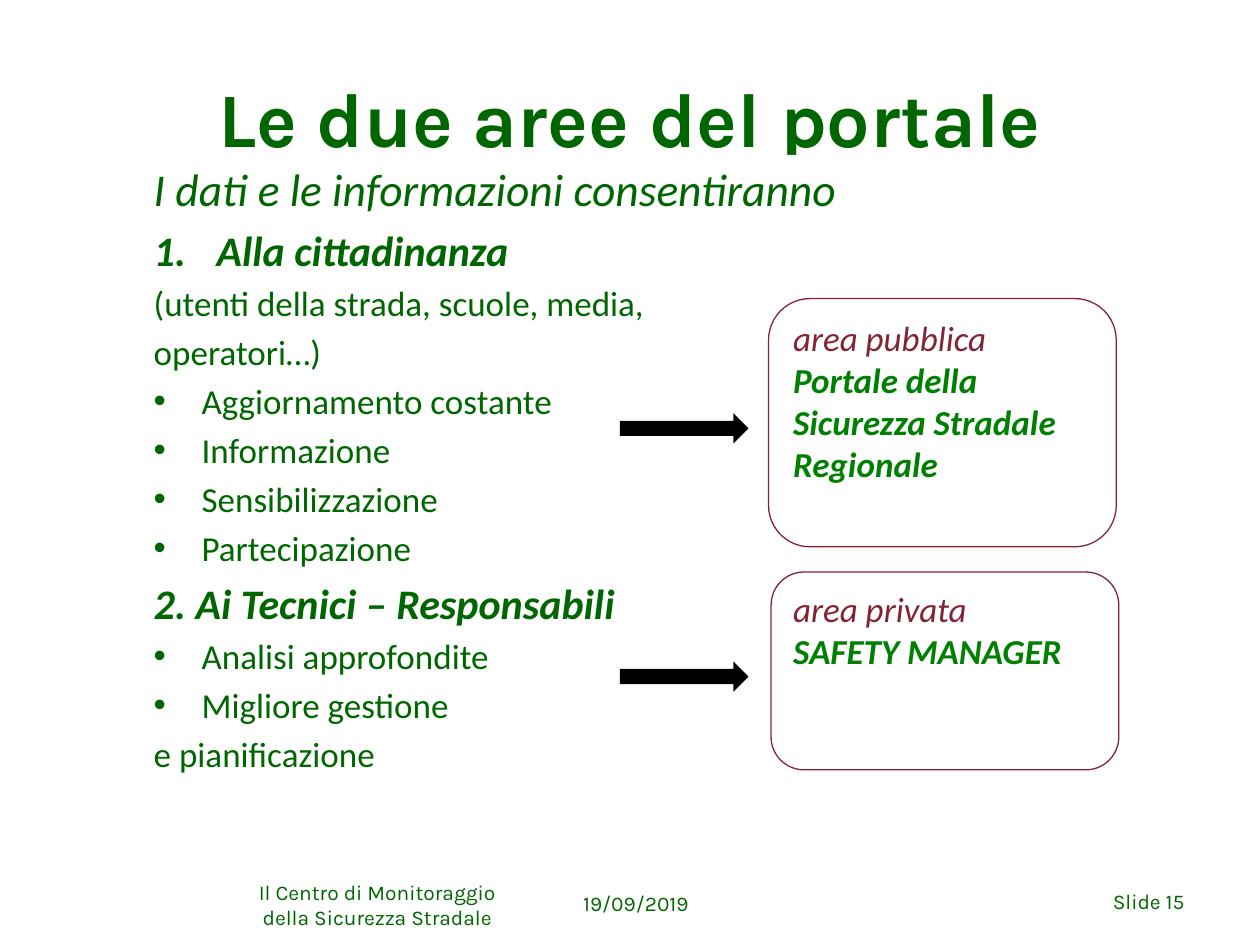
from lxml import etree
from pptx import Presentation
from pptx.dml.color import RGBColor
from pptx.enum.shapes import MSO_SHAPE
from pptx.enum.text import MSO_ANCHOR, MSO_AUTO_SIZE, PP_ALIGN
from pptx.oxml.ns import qn
from pptx.util import Inches, Pt

LEFT, CENTER, RIGHT, JUSTIFY = PP_ALIGN.LEFT, PP_ALIGN.CENTER, PP_ALIGN.RIGHT, PP_ALIGN.JUSTIFY
TOP, MIDDLE = MSO_ANCHOR.TOP, MSO_ANCHOR.MIDDLE
NO_AUTOFIT = MSO_AUTO_SIZE.NONE
ROUNDED, ARROW = MSO_SHAPE.ROUNDED_RECTANGLE, MSO_SHAPE.RIGHT_ARROW

DARK_GREEN, GREEN, MAROON = "006600", "008000", "822434"
WHITE, BLACK = "FFFFFF", "000000"
HEADING = {"size": 24, "bold": True, "italic": True}
NUMBERED = {**HEADING, "marker": ("a:buAutoNum", {"type": "arabicPeriod"}), "indent": 0.5}
BULLET = {"marker": ("a:buChar", {"char": "•"}), "indent": 0.38}
BODY_LINES = [
    ("I dati e le informazioni consentiranno", {"size": 26, "italic": True}),
    ("Alla cittadinanza", NUMBERED),
    ("(utenti della strada, scuole, media,", {}),
    ("operatori…)", {}),
    ("Aggiornamento costante", BULLET),
    ("Informazione", BULLET),
    ("Sensibilizzazione", BULLET),
    ("Partecipazione", BULLET),
    ("2. Ai Tecnici – Responsabili", HEADING),
    ("Analisi approfondite", BULLET),
    ("Migliore gestione", BULLET),
    ("e pianificazione", {}),
]


def color(value):
    """Turn a hex string into a colour."""
    return RGBColor.from_string(value)


def place(shape, box):
    """Move a shape to a box of left, top, width and height in inches."""
    shape.left, shape.top, shape.width, shape.height = map(Inches, box)


def prepare_frame(shape, anchor):
    """Give a shape an empty wrapping text frame with an anchor."""
    frame = shape.text_frame
    frame.word_wrap = True
    frame.auto_size = NO_AUTOFIT
    frame.vertical_anchor = anchor
    return frame


def write(frame, text, size=20, font="Calibri", fill=DARK_GREEN, bold=False, italic=False,
          align=LEFT, before=0, marker=("a:buNone", {}), indent=0):
    """Add one formatted paragraph, filling the empty first one if there is one."""
    first = frame.paragraphs[0]
    is_first = not first.runs
    paragraph = first if is_first else frame.add_paragraph()
    properties = paragraph._p.get_or_add_pPr()
    properties.set("marL", str(Inches(indent)))
    properties.set("indent", str(-Inches(indent)))
    tag, attributes = marker
    etree.SubElement(properties, qn(tag), attributes)
    paragraph.alignment = align
    paragraph.space_before = Pt(0 if is_first else before)
    run = paragraph.add_run()
    run.text = text
    run.font.name, run.font.size = font, Pt(size)
    run.font.bold, run.font.italic = bold, italic
    run.font.color.rgb = color(fill)


def add_title(slide, box, text):
    """Fill the title placeholder."""
    place(slide.shapes.title, box)
    frame = prepare_frame(slide.shapes.title, MIDDLE)
    write(frame, text, size=44, font="Karla", bold=True, align=CENTER)


def add_body(slide, box, lines):
    """Fill the body placeholder with the list of audiences."""
    body = slide.placeholders[1]
    place(body, box)
    body.fill.solid()
    body.fill.fore_color.rgb = color(WHITE)
    frame = prepare_frame(body, TOP)
    for text, style in lines:
        write(frame, text, align=JUSTIFY, before=style.get("size", 20) * 0.2, **style)


def add_footer(slide, box, text, align):
    """Add one footer text."""
    frame = prepare_frame(slide.shapes.add_textbox(*map(Inches, box)), MIDDLE)
    write(frame, text, size=12, font="Karla", align=align)


def add_area(slide, box, label, name):
    """Add the rounded box that names one area of the portal."""
    area = slide.shapes.add_shape(ROUNDED, *map(Inches, box))
    area.shadow.inherit = False
    area.fill.background()
    area.line.color.rgb = color(MAROON)
    area.line.width = Pt(0.75)
    frame = prepare_frame(area, TOP)
    write(frame, label, fill=MAROON, italic=True)
    write(frame, name, fill=GREEN, bold=True, italic=True)


def add_arrow(slide, box):
    """Add a black arrow pointing at an area."""
    arrow = slide.shapes.add_shape(ARROW, *map(Inches, box))
    arrow.shadow.inherit = False
    arrow.fill.solid()
    arrow.fill.fore_color.rgb = color(BLACK)
    arrow.line.fill.background()


def main():
    """Build the slide and save it."""
    presentation = Presentation()
    presentation.slide_width, presentation.slide_height = Inches(10), Inches(7.5)
    slide = presentation.slides.add_slide(presentation.slide_layouts[1])
    add_title(slide, (0.5, 0.3, 9, 1.25), "Le due aree del portale")
    add_body(slide, (1.12, 1.23, 8.27, 5.04), BODY_LINES)
    add_footer(slide, (4.53, 6.97, 1.1, 0.4), "19/09/2019", LEFT)
    add_footer(slide, (1.93, 6.98, 2.13, 0.4),
               "Il Centro di Monitoraggio della Sicurezza Stradale", CENTER)
    add_footer(slide, (8.62, 6.95, 0.88, 0.4), "Slide 15", RIGHT)
    add_area(slide, (6.1, 2.37, 2.76, 1.97), "area pubblica",
             "Portale della Sicurezza Stradale Regionale")
    add_area(slide, (6.12, 4.54, 2.76, 1.57), "area privata", "SAFETY MANAGER")
    for top in (3.28, 5.25):
        add_arrow(slide, (4.92, top, 1.02, 0.24))
    presentation.save("out.pptx")


if __name__ == "__main__":
    main()
